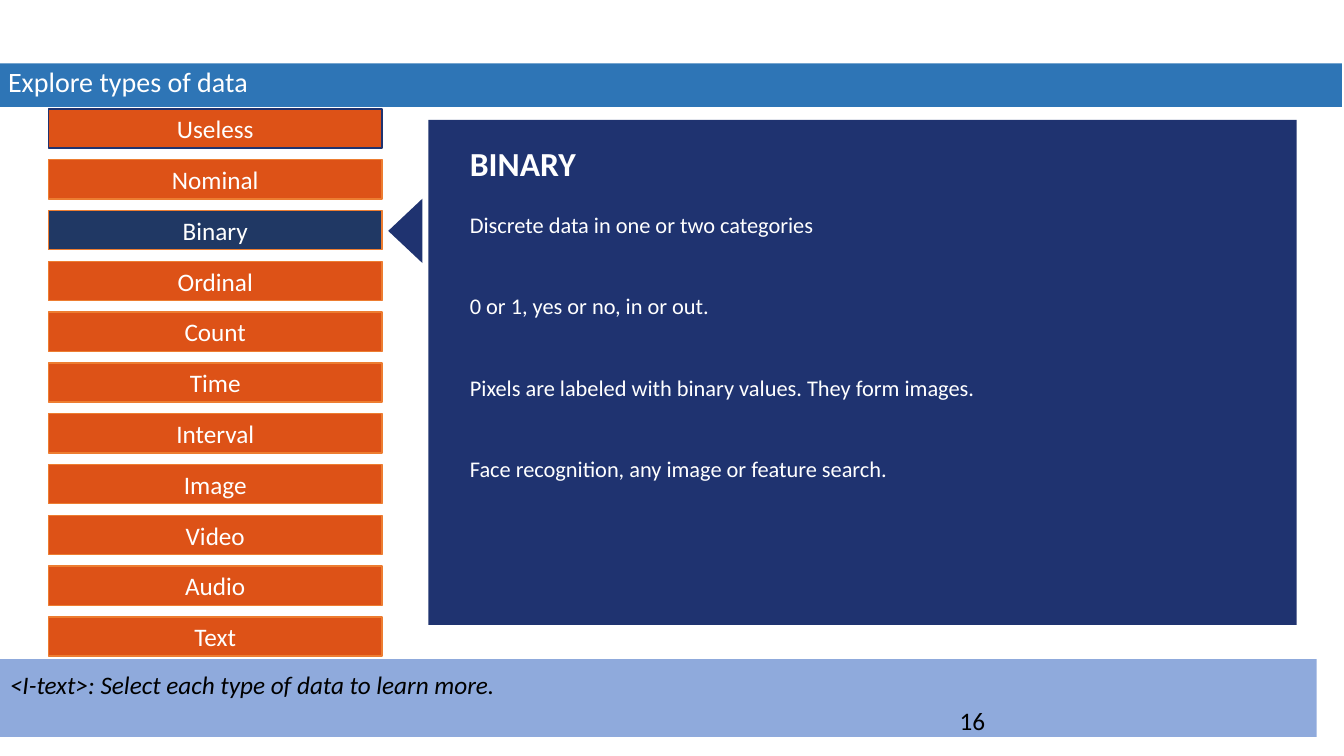
from pptx import Presentation, util as u
from pptx.dml.color import RGBColor
from pptx.enum import shapes, text
from pptx.oxml.ns import qn

WHITE = RGBColor(0xFF, 0xFF, 0xFF)
BLACK = RGBColor(0, 0, 0)
TITLE_BLUE = RGBColor(0x2E, 0x75, 0xB6)
FOOTER_BLUE = RGBColor(0x8F, 0xAA, 0xDC)
NAVY = RGBColor(0x1F, 0x33, 0x70)
SELECTED_BLUE = RGBColor(0x20, 0x38, 0x64)
ORANGE = RGBColor(0xDD, 0x52, 0x17)
ORANGE_EDGE = RGBColor(0xED, 0x7D, 0x31)

presentation = Presentation()
presentation.slide_width = u.Inches(13.33)
presentation.slide_height = u.Inches(7.5)
COLUMN = presentation.slide_width / 100
ROW = presentation.slide_height / 100
slide = presentation.slides.add_slide(presentation.slide_layouts[1])


def add_box(kind, left, top, width, height, fill, edge=None):
    shape = slide.shapes.add_shape(
        kind, round(left * COLUMN), round(top * ROW),
        round(width * COLUMN), round(height * ROW))
    shape.shadow.inherit = False
    shape.fill.solid()
    shape.fill.fore_color.rgb = fill
    if edge is None:
        shape.line.fill.background()
    else:
        shape.line.color.rgb = edge
        shape.line.width = u.Pt(1)
    return shape


def write(paragraph, words, color, alignment=text.PP_ALIGN.LEFT, **font_format):
    paragraph.alignment = alignment
    run = paragraph.add_run()
    run.text = words
    run.font.color.rgb = color
    for name, value in {"name": "Calibri", "size": u.Pt(18), **font_format}.items():
        setattr(run.font, name, value)


title = slide.shapes.title
body = slide.placeholders[1]
for placeholder, (left, top, width, height) in (
    (title, (-0.15, 8.4, 100, 5.73)),
    (body, (34.21, 18.27, 50.34, 46.27)),
):
    placeholder.left, placeholder.width = round(left * COLUMN), round(width * COLUMN)
    placeholder.top, placeholder.height = round(top * ROW), round(height * ROW)
    frame_format = {"vertical_anchor": text.MSO_ANCHOR.TOP,
                    "auto_size": text.MSO_AUTO_SIZE.NONE, "word_wrap": True}
    for name, value in frame_format.items():
        setattr(placeholder.text_frame, name, value)

title.fill.solid()
title.fill.fore_color.rgb = TITLE_BLUE
title_paragraph = title.text_frame.paragraphs[0]
title_paragraph.line_spacing = 0.9
write(title_paragraph, "Explore types of data", WHITE, size=u.Pt(20))

footer = add_box(shapes.MSO_SHAPE.RECTANGLE, 0, 87.2, 97.97, 10.27, FOOTER_BLUE)
footer.text_frame.vertical_anchor = text.MSO_ANCHOR.TOP
for side in ("left", "top", "right", "bottom"):
    setattr(footer.text_frame, f"margin_{side}", u.Inches(0.1))
write(footer.text_frame.paragraphs[0],
      "<I-text>: Select each type of data to learn more.", BLACK, italic=True)

page_number = slide.shapes.add_textbox(
    round(70.67 * COLUMN), round(92.67 * ROW), round(22.5 * COLUMN), round(5.33 * ROW))
page_number.text_frame.word_wrap = True
write(page_number.text_frame.paragraphs[0], "16", BLACK)

panel = add_box(shapes.MSO_SHAPE.RECTANGLE, 31.88, 15.87, 64.59, 66.8, NAVY)
pointer = add_box(shapes.MSO_SHAPE.ISOSCELES_TRIANGLE, 27.76, 28.27, 4.8, 4.53, NAVY)
pointer.rotation = 270

panel.element.addnext(body.element)
details = [
    ("BINARY", 24, True, 0),
    ("Discrete data in one or two categories", 16, False, 19.5),
    ("0 or 1, yes or no, in or out.", 16, False, 39),
    ("Pixels are labeled with binary values. They form images.", 16, False, 39),
    ("Face recognition, any image or feature search.", 16, False, 39),
]
for index, (words, size, bold, gap) in enumerate(details):
    frame = body.text_frame
    paragraph = frame.add_paragraph() if index else frame.paragraphs[0]
    properties = paragraph._p.get_or_add_pPr()
    properties.set("marL", "0")
    properties.set("indent", "0")
    properties.append(properties.makeelement(qn("a:buNone"), {}))
    paragraph.space_before = u.Pt(gap)
    write(paragraph, words, WHITE, size=u.Pt(size), bold=bold)

data_types = ["Useless", "Nominal", "Binary", "Ordinal", "Count", "Time",
              "Interval", "Image", "Video", "Audio", "Text"]
for index, data_type in enumerate(data_types):
    button = add_box(
        shapes.MSO_SHAPE.RECTANGLE, 3.6, 14.4 + 6.72 * index, 24.83, 5.2,
        SELECTED_BLUE if data_type == "Binary" else ORANGE,
        NAVY if index == 0 else ORANGE_EDGE)
    button.text_frame.vertical_anchor = text.MSO_ANCHOR.MIDDLE
    write(button.text_frame.paragraphs[0], data_type, WHITE, text.PP_ALIGN.CENTER)

presentation.save("out.pptx")
